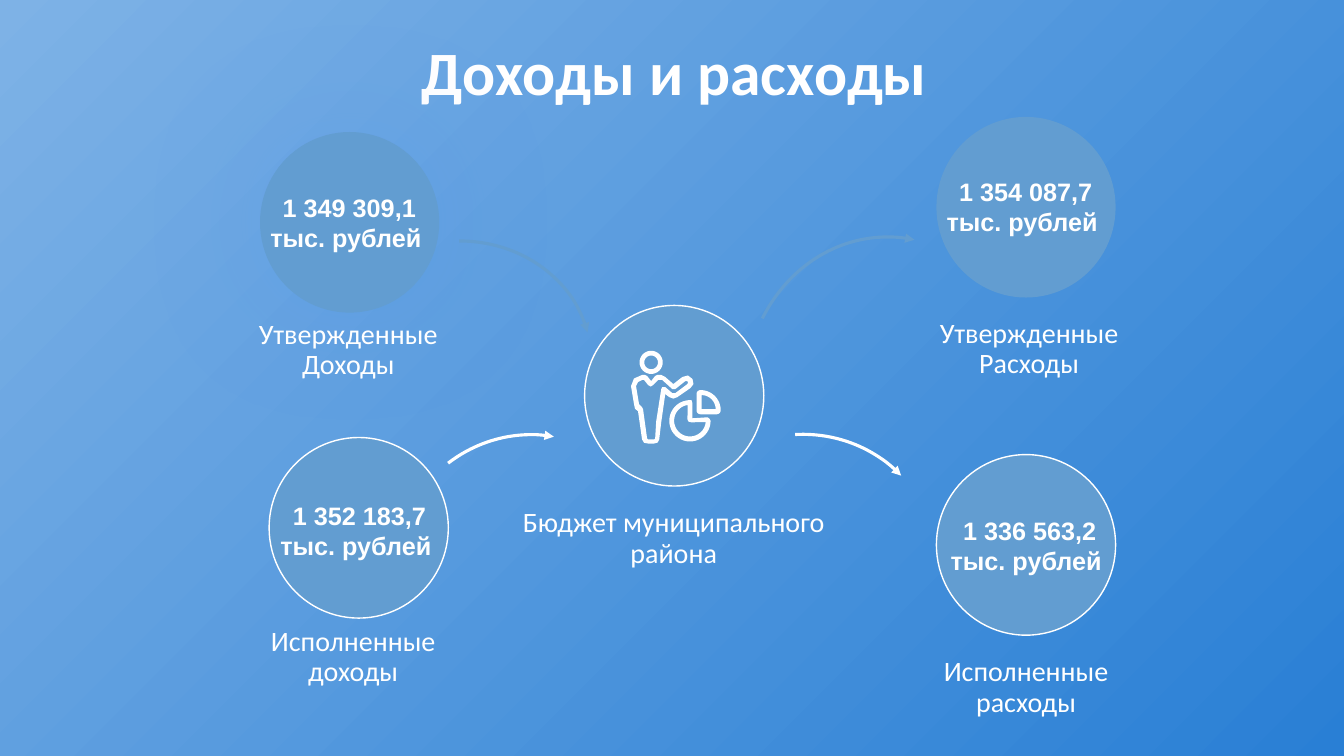
from math import cos, radians, sin

from lxml.etree import SubElement
from pptx import Presentation
from pptx.dml.color import RGBColor
from pptx.enum.shapes import MSO_SHAPE as Preset
from pptx.enum.text import MSO_ANCHOR as Anchor, MSO_AUTO_SIZE as AutoSize, PP_ALIGN as Align
from pptx.oxml.ns import qn
from pptx.util import Pt

WHITE, BLUE = "FFFFFF", "629DD1"
CIRCLE_W, CIRCLE_H = 128, 129
LABEL = {"name": "Calibri", "size": Pt(20), "bold": False}
AMOUNT = {"name": "Arial", "size": Pt(18), "bold": True}
TITLE = {"name": "Calibri", "size": Pt(44), "bold": True}

# left, top, outline colour
CIRCLES = [
    (192.24, 312.48, WHITE),
    (417.6, 218.16, WHITE),
    (668.88, 324.72, WHITE),
    (668.88, 83.52, None),
]
# left, top, width, paragraphs
LABELS = [
    (156.2, 447.8, 192.2, ["Исполненные", "доходы"]),
    (372.2, 362.9, 218.2, ["Бюджет муниципального района"]),
    (645.1, 469.4, 175.7, ["Исполненные", "расходы"]),
    (663.8, 227.5, 142.6, ["Утвержденные Расходы"]),
    (176.4, 228.2, 144.7, ["Утвержденные Доходы"]),
]
# left, top, width, height, rotation, start and end adjustments, colour
ARCS = [
    (223.9, 172.8, 199.4, 182.2, 344.6, (172.881, 0), BLUE),
    (275, 314.6, 199.4, 188.6, 299, (177.623, 205.921), WHITE),
    (470.9, 311, 199.4, 192.2, 332.7, (177.484, 206.801), WHITE),
    (522, 179.3, 223.9, 203.8, 270, (180.593, 5.97), BLUE),
]
AMOUNTS = [
    (193, 353.5, "1 352 183,7"),
    (185.8, 133.9, "1 349 309,1"),
    (668.9, 122.4, "1 354 087,7"),
    (671.8, 364.3, "1 336 563,2"),
]


def color(hex_code):
    return RGBColor.from_string(hex_code)


def set_all(target, values):
    for name, value in values.items():
        setattr(target, name, value)


def write(frame, lines, font, spacing=None):
    for index, line in enumerate(lines):
        para = frame.add_paragraph() if index else frame.paragraphs[0]
        set_all(para, {"alignment": Align.CENTER, "line_spacing": spacing})
        span = para.add_run()
        span.text = line
        set_all(span.font, font)
        span.font.color.rgb = color(WHITE)


def add_background(page):
    fill = page.background.fill
    fill.gradient()
    fill.gradient_angle = 135
    for stop, (position, shade) in zip(fill.gradient_stops, [(0, "297FD5"), (1, "7EB2E6")]):
        stop.position = position
        stop.color.rgb = color(shade)


def add_circle(page, left, top, outline=None):
    circle = page.shapes.add_shape(Preset.OVAL, Pt(left), Pt(top), Pt(CIRCLE_W), Pt(CIRCLE_H))
    circle.shadow.inherit = False
    circle.fill.solid()
    circle.fill.fore_color.rgb = color(BLUE)
    if outline:
        circle.line.color.rgb = color(outline)
        circle.line.width = Pt(1)
    else:
        circle.line.fill.background()
    return circle


def add_glow_shadow(shape):
    effects = shape.element.spPr.find(qn("a:effectLst"))
    shadow = SubElement(effects, qn("a:outerShdw"), blurRad=str(Pt(100)), dist="0", dir="0")
    shade = SubElement(shadow, qn("a:srgbClr"), val="367CFF")
    SubElement(shade, qn("a:alpha"), val="13000")


def add_arc(page, left, top, width, height, rotation, ends, stroke):
    arc = page.shapes.add_shape(Preset.ARC, Pt(left), Pt(top), Pt(width), Pt(height))
    arc.shadow.inherit = False
    arc.rotation = rotation
    for index, value in enumerate(ends):
        arc.adjustments[index] = value
    arc.fill.background()
    arc.line.color.rgb = color(stroke)
    arc.line.width = Pt(2.25)
    SubElement(arc.element.spPr.find(qn("a:ln")), qn("a:tailEnd"), type="triangle")


def add_text(page, left, top, width, height, lines, font, spacing=None, **frame_format):
    box = page.shapes.add_textbox(Pt(left), Pt(top), Pt(width), Pt(height))
    set_all(box.text_frame, {"auto_size": AutoSize.SHAPE_TO_FIT_TEXT, **frame_format})
    write(box.text_frame, lines, font, spacing)


def add_label(page, left, top, width, lines):
    margins = {f"margin_{side}": 0 for side in ("left", "right", "top", "bottom")}
    add_text(page, left, top, width, 43.9, lines, LABEL, 0.9,
             word_wrap=True, vertical_anchor=Anchor.MIDDLE, **margins)


def add_amount(page, left, top, amount):
    add_text(page, left, top, 127.4, 51.1, [amount, "тыс. рублей "], AMOUNT, word_wrap=False)


def curve(x, y, radius, start, end, steps=32):
    angles = [radians(start + (end - start) * i / steps) for i in range(steps + 1)]
    return [(x + radius * cos(a), y + radius * sin(a)) for a in angles]


def person_and_pie():
    """Contours on a grid of 0.72 pt: each outer edge, then its hole."""
    body = [(7, 60), (11, 88), (13, 91.3), (17, 92), (23, 92), (26.5, 91), (28, 88),
            (30, 71), (34, 43), (38, 46), (42, 47.5), (46, 46), (59, 37), (62, 33),
            (61, 28), (56.5, 24.5), (51, 26), (42, 33), (34, 26), (30, 24), (26, 24),
            (24, 25), (20, 30), (16, 25), (14, 24), (11, 24), (3, 27.5), (0, 35),
            (3, 53), (4, 57.5)]
    body_hole = [(7, 31), (11, 29), (13, 29), (17, 34), (19.5, 35.5), (22, 34), (27, 29),
                 (31, 29), (41, 38), (44, 38), (54, 30), (56, 30), (56.5, 31.5), (56, 33),
                 (44, 42), (41, 42), (34, 36), (31, 36), (30, 38), (25, 70), (24, 87),
                 (23, 88), (17, 88), (16, 87), (12, 58), (11, 56), (8, 53), (5, 35)]
    return [
        curve(20, 11.5, 11.5, 0, 360), curve(20, 11.5, 6.8, 0, 360),
        body, body_hole,
        # Cut-out slice
        curve(69, 59, 20, 270, 360) + curve(85, 59, 4, 0, 90, 6)
        + curve(69, 59, 4, 90, 180, 6) + curve(69, 43, 4, 180, 270, 6),
        [(70, 58)] + curve(70, 58, 14, 270, 360),
        # Rest of the pie
        curve(58.5, 69.5, 20.5, 0, 265) + [(60, 49), (61, 52), (61, 67), (76, 66), (78, 67.5)],
        curve(58.5, 69.3, 15.7, 5, 262) + [(56, 68), (57, 70.3), (60, 71)],
    ]


def add_icon(page, left, top):
    contours = [[(x * 72, y * 72) for x, y in points] for points in person_and_pie()]
    builder = page.shapes.build_freeform(*contours[0][0], scale=Pt(0.01))
    for index, points in enumerate(contours):
        if index:
            builder.move_to(*points[0])
        builder.add_line_segments(points[1:], close=True)
    icon = builder.convert_to_shape(Pt(left), Pt(top))
    icon.shadow.inherit = False
    icon.fill.solid()
    icon.fill.fore_color.rgb = color(WHITE)
    icon.line.fill.background()


def add_title(page, text):
    title = page.shapes.title
    set_all(title, {"left": Pt(67.7), "top": Pt(25.9), "width": Pt(828), "height": Pt(55.4)})
    set_all(title.text_frame, {"vertical_anchor": Anchor.MIDDLE, "word_wrap": True,
                               "auto_size": AutoSize.SHAPE_TO_FIT_TEXT})
    write(title.text_frame, [text], TITLE, 0.9)


def main():
    deck = Presentation()
    set_all(deck, {"slide_width": Pt(960), "slide_height": Pt(540)})
    page = deck.slides.add_slide(deck.slide_layouts[5])
    add_background(page)
    add_title(page, "Доходы и расходы")

    # Circles and icon
    for circle in CIRCLES:
        add_circle(page, *circle)
    add_glow_shadow(add_circle(page, 185.76, 94.32))
    add_icon(page, 450.72, 250.56)

    # Captions, arrows and sums
    for label in LABELS:
        add_label(page, *label)
    for arc in ARCS:
        add_arc(page, *arc)
    for amount in AMOUNTS:
        add_amount(page, *amount)
    deck.save("out.pptx")


if __name__ == "__main__":
    main()
